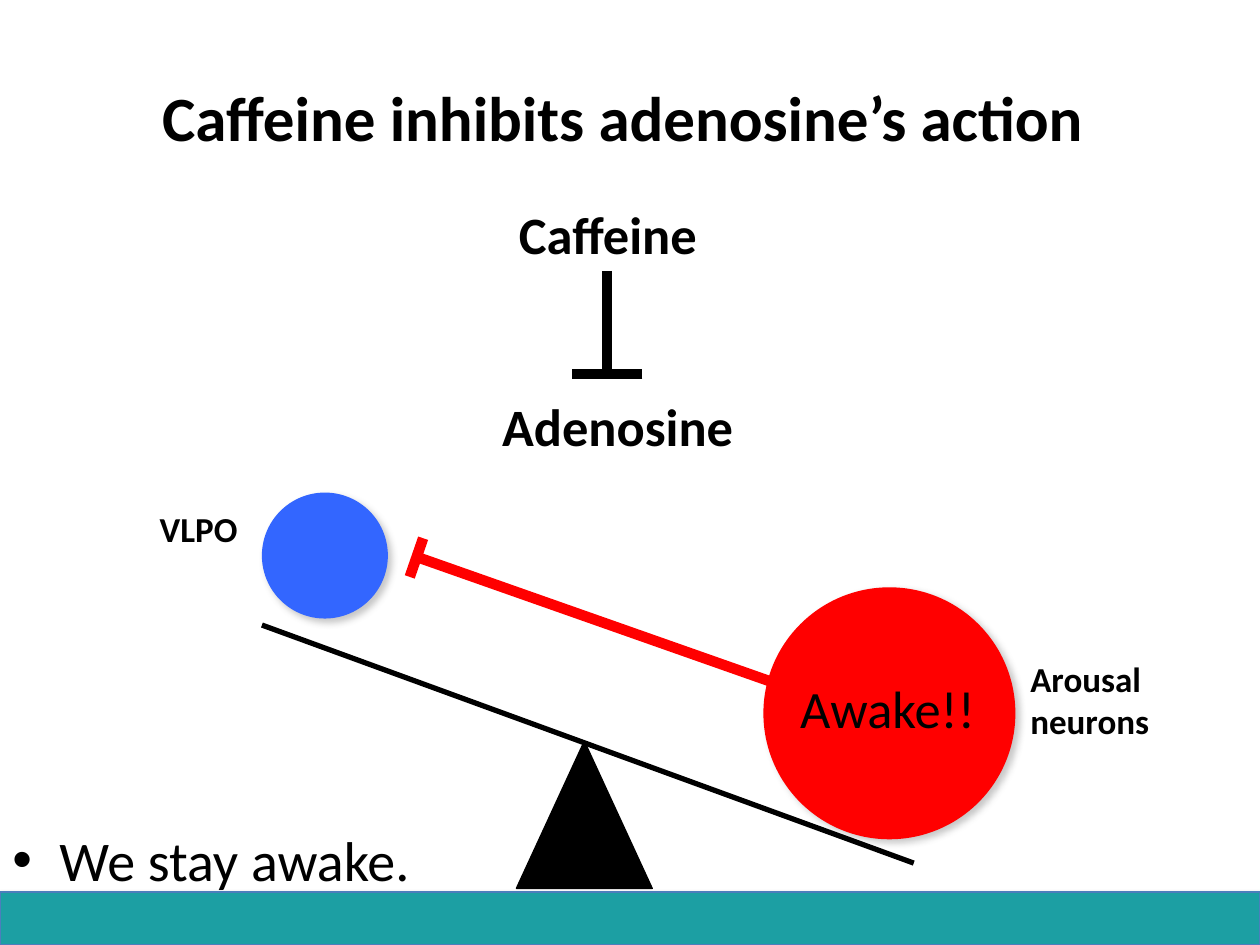
from typing import NamedTuple, Optional

from lxml.etree import SubElement
from pptx import Presentation
from pptx.dml.color import RGBColor
from pptx.enum.shapes import MSO_CONNECTOR as Connector, MSO_SHAPE as Shape
from pptx.enum.text import MSO_ANCHOR as Anchor, PP_ALIGN as Align
from pptx.oxml.ns import qn
from pptx.util import Cm, Pt

FONT = "Calibri"
BLACK, RED, BLUE, TEAL = "000000", "FF0000", "3366FF", "1C9FA3"


class Shadow(NamedTuple):
    color: str
    opacity: int  # percent
    blur: float  # points
    distance: float  # points
    angle: int  # degrees


class Figure(NamedTuple):
    kind: Shape
    box: tuple  # left, top, width, height in cm
    fill: str
    outline: Optional[str] = None
    shadow: Optional[Shadow] = None


class Line(NamedTuple):
    start: tuple
    end: tuple
    color: str
    width: float


class Label(NamedTuple):
    lines: tuple
    box: tuple
    size: int
    bold: bool = True
    align: Align = Align.LEFT
    wrap: bool = False
    anchor: Anchor = Anchor.TOP
    bullet: bool = False


BALL_SHADOW = Shadow("808080", 43, 4, 3, 45)
BAR_SHADOW = Shadow(BLACK, 35, 3.1, 1.8, 90)

FOOTER_BAR = Figure(Shape.RECTANGLE, (0, 17.98, 25.4, 1.07), TEAL, "4B7EBC", BAR_SHADOW)
AROUSAL_BALL = Figure(Shape.OVAL, (15.39, 11.84, 5.08, 5.08), RED, shadow=BALL_SHADOW)
VLPO_BALL = Figure(Shape.OVAL, (5.28, 9.93, 2.54, 2.54), BLUE, shadow=BALL_SHADOW)
FULCRUM = Figure(Shape.ISOSCELES_TRIANGLE, (10.41, 14.94, 2.74, 2.97), BLACK, BLACK)

# Each inhibition sign is a stem and a crossbar
INHIBITIONS = (
    Line((8.41, 11.23), (16.05, 13.92), RED, 6),
    Line((8.53, 10.85), (8.26, 11.63), RED, 6),
    Line((12.24, 5.46), (12.24, 7.54), BLACK, 6),
    Line((12.95, 7.54), (11.53, 7.54), BLACK, 6),
)
PLANK = Line((5.28, 12.6), (18.42, 17.4), BLACK, 3)

LABELS = (
    Label(("Caffeine inhibits adenosine’s action ",), (1.27, 0.76, 22.86, 3.18), 36,
          align=Align.CENTER, wrap=True, anchor=Anchor.MIDDLE),
    Label(("Caffeine",), (9.5, 3.94, 5.51, 1.55), 30, align=Align.CENTER, wrap=True),
    Label(("Adenosine",), (9.7, 7.82, 5.51, 1.55), 30, align=Align.CENTER, wrap=True),
    Label(("VLPO",), (2.97, 10.11, 2.08, 1.12), 20),
    Label(("Arousal", "neurons"), (20.52, 13.13, 2.97, 1.96), 20),
    Label(("Awake!!",), (15.88, 13.51, 4.19, 1.55), 30, bold=False),
    Label(("We stay awake.",), (0, 16.51, 10.13, 1.9), 32, bold=False, wrap=True, bullet=True),
)


def rgb(color: str) -> RGBColor:
    return RGBColor.from_string(color)


def add_shadow(shape, shadow: Shadow) -> None:
    effects = shape._element.spPr.find(qn("a:effectLst"))
    outer = SubElement(effects, qn("a:outerShdw"), blurRad=str(Pt(shadow.blur)),
                       dist=str(Pt(shadow.distance)), dir=str(shadow.angle * 60000),
                       algn="ctr", rotWithShape="0")
    color = SubElement(outer, qn("a:srgbClr"), val=shadow.color)
    SubElement(color, qn("a:alpha"), val=str(shadow.opacity * 1000))


def draw_figure(slide, figure: Figure) -> None:
    shape = slide.shapes.add_shape(figure.kind, *map(Cm, figure.box))
    shape.fill.solid()
    shape.fill.fore_color.rgb = rgb(figure.fill)
    if figure.outline:
        shape.line.color.rgb = rgb(figure.outline)
        shape.line.width = Pt(0.75)
    else:
        shape.line.fill.background()
    shape.shadow.inherit = False
    if figure.shadow:
        add_shadow(shape, figure.shadow)


def draw_line(slide, line: Line) -> None:
    connector = slide.shapes.add_connector(
        Connector.STRAIGHT, *map(Cm, line.start + line.end))
    connector.line.color.rgb = rgb(line.color)
    connector.line.width = Pt(line.width)
    SubElement(connector._element.spPr, qn("a:effectLst"))


def add_bullet(paragraph) -> None:
    paragraph.space_before = Pt(6.4)
    properties = paragraph._p.get_or_add_pPr()
    properties.set("marL", str(Cm(0.95)))
    properties.set("indent", str(-Cm(0.95)))
    SubElement(properties, qn("a:buFont"), typeface="Arial")
    SubElement(properties, qn("a:buChar"), char="•")


def draw_label(slide, label: Label) -> None:
    frame = slide.shapes.add_textbox(*map(Cm, label.box)).text_frame
    frame.word_wrap = label.wrap
    frame.vertical_anchor = label.anchor
    for index, text in enumerate(label.lines):
        paragraph = frame.add_paragraph() if index else frame.paragraphs[0]
        paragraph.alignment = label.align
        if label.bullet:
            add_bullet(paragraph)
        run = paragraph.add_run()
        run.text = text
        run.font.name = FONT
        run.font.size = Pt(label.size)
        run.font.bold = label.bold
        run.font.color.rgb = rgb(BLACK)


def main() -> None:
    presentation = Presentation()
    presentation.slide_width, presentation.slide_height = Cm(25.4), Cm(19.05)
    slide = presentation.slides.add_slide(presentation.slide_layouts[6])

    # Footer, balls and inhibition signs
    for figure in (FOOTER_BAR, AROUSAL_BALL, VLPO_BALL):
        draw_figure(slide, figure)
    for line in INHIBITIONS:
        draw_line(slide, line)

    # Wording
    for label in LABELS:
        draw_label(slide, label)

    # Seesaw
    draw_figure(slide, FULCRUM)
    draw_line(slide, PLANK)

    presentation.save("out.pptx")


if __name__ == "__main__":
    main()
